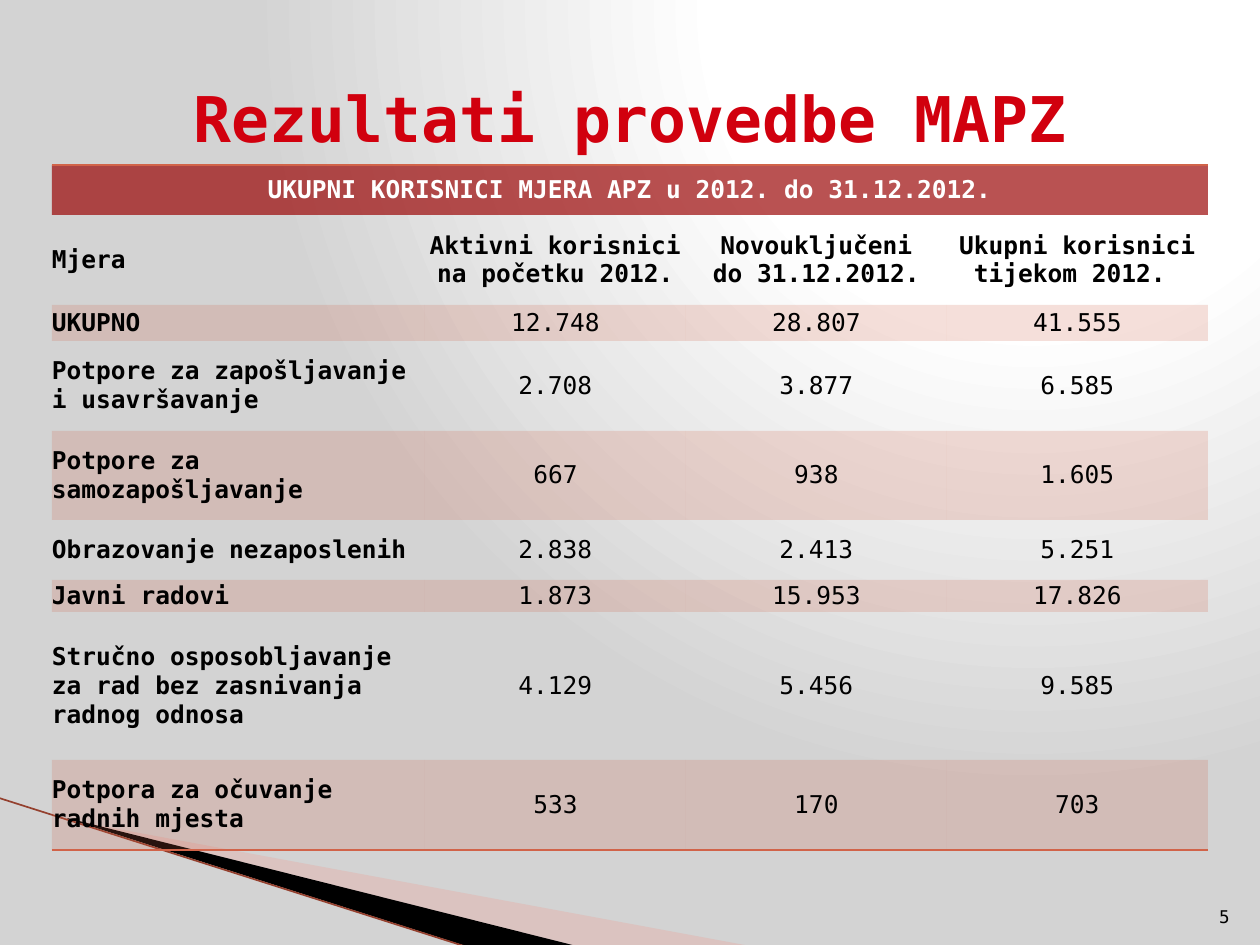
"""Build the slide with the results of the employment measures."""
from lxml.etree import SubElement
from pptx import Presentation
from pptx.dml.color import RGBColor
from pptx.enum.shapes import MSO_CONNECTOR
from pptx.enum.text import MSO_ANCHOR as Anchor, PP_ALIGN as Align
from pptx.oxml import parse_xml
from pptx.oxml.ns import qn
from pptx.util import Emu, Pt

FONT = "DejaVu Sans Mono"
COLORS = {
    "title": "D1000E", "text": "000000", "header_text": "FFFFFF", "header": "990000",
    "accent": "D16349", "wedge": "E7ACA4", "edge": "94402E",
    "light": "FFFFFF", "shade": "D3D3D3",
}
NAMESPACE = "http://schemas.openxmlformats.org/drawingml/2006/main"
NO_TABLE_STYLE = "{2D5ABB26-0587-4C30-8999-92F81FD0307C}"
COLUMN_WIDTHS = [373, 261, 261, 261]
ROW_HEIGHTS = [50, 90, 36, 90, 89, 60, 32, 148, 90]
ROWS = [
    ["UKUPNI KORISNICI MJERA APZ u 2012. do 31.12.2012.", "", "", ""],
    ["Mjera", "Aktivni korisnici \nna početku 2012.",
     "Novouključeni\ndo 31.12.2012.", "Ukupni korisnici\ntijekom 2012. "],
    ["UKUPNO", "12.748", "28.807", "41.555"],
    ["Potpore za zapošljavanje i usavršavanje", "2.708", "3.877", "6.585"],
    ["Potpore za samozapošljavanje", "667", "938", "1.605"],
    ["Obrazovanje nezaposlenih", "2.838", "2.413", "5.251"],
    ["Javni radovi", "1.873", "15.953", "17.826"],
    ["Stručno osposobljavanje za rad bez zasnivanja radnog odnosa",
     "4.129", "5.456", "9.585"],
    ["Potpora za očuvanje radnih mjesta", "533", "170", "703"],
]
SCALE = 914400 / 126


def px(length):
    return Emu(round(length * SCALE))


def rgb(name):
    return RGBColor.from_string(COLORS[name])


def set_fill(fill, color, opacity=100):
    fill.solid()
    fill.fore_color.rgb = rgb(color)
    if opacity < 100:
        element = fill._xPr.find(".//" + qn("a:srgbClr"))
        SubElement(element, qn("a:alpha"), val=str(opacity * 1000))


def write_text(frame, text, align, color="text", **font_values):
    frame.text = text
    for paragraph in frame.paragraphs:
        paragraph.alignment = align
        for run in paragraph.runs:
            for name, value in {"name": FONT, **font_values}.items():
                setattr(run.font, name, value)
            run.font.color.rgb = rgb(color)


def set_background(slide):
    slide.background.fill.solid()
    properties = slide.element.find(".//" + qn("p:bgPr"))
    stops = "".join(
        f'<a:gs pos="{position * 1000}"><a:srgbClr val="{COLORS[name]}"/></a:gs>'
        for position, name in [(0, "light"), (40, "light"), (100, "shade")])
    gradient = parse_xml(
        f'<a:gradFill xmlns:a="{NAMESPACE}" rotWithShape="1"><a:gsLst>{stops}</a:gsLst>'
        '<a:path path="circle"><a:fillToRect l="65000" t="0" r="0" b="98000"/></a:path>'
        '</a:gradFill>')
    properties.replace(properties[0], gradient)


def add_wedge(slide, points, color, opacity=100):
    builder = slide.shapes.build_freeform(*points[0], scale=SCALE)
    builder.add_line_segments(points[1:], close=True)
    shape = builder.convert_to_shape()
    shape.shadow.inherit = False
    shape.line.fill.background()
    set_fill(shape.fill, color, opacity)


def add_line(slide, start, end, color, width):
    ends = [px(value) for value in (*start, *end)]
    connector = slide.shapes.add_connector(MSO_CONNECTOR.STRAIGHT, *ends)
    connector.line.color.rgb = rgb(color)
    connector.line.width = Pt(width)
    SubElement(connector.element.spPr, qn("a:effectLst"))


def add_text(slide, box, text, align, anchor, **text_values):
    frame = slide.shapes.add_textbox(*map(px, box)).text_frame
    frame.word_wrap = True
    frame.vertical_anchor = anchor
    write_text(frame, text, align, **text_values)


def add_border(cell, side):
    properties = cell._tc.get_or_add_tcPr()
    properties.insert(0, parse_xml(
        f'<a:{side} xmlns:a="{NAMESPACE}" w="12700"><a:solidFill>'
        f'<a:srgbClr val="{COLORS["accent"]}"/></a:solidFill></a:{side}>'))


def format_cell(cell, text, row, column):
    cell_values = {"margin_left": 0, "margin_right": 0, "margin_top": 0,
                   "margin_bottom": 0, "vertical_anchor": Anchor.MIDDLE}
    for name, value in cell_values.items():
        setattr(cell, name, value)
    write_text(cell.text_frame, text,
               Align.LEFT if row and column == 0 else Align.CENTER,
               "text" if row else "header_text",
               size=Pt(14), bold=row < 2 or column == 0)
    if row == 0:
        set_fill(cell.fill, "header", 68)
        add_border(cell, "lnT")
    elif row % 2 == 0:
        set_fill(cell.fill, "accent", 20)
    else:
        cell.fill.background()
    if row == len(ROWS) - 1:
        add_border(cell, "lnB")


def add_results_table(slide, left, top):
    size = (sum(COLUMN_WIDTHS), sum(ROW_HEIGHTS))
    table = slide.shapes.add_table(
        len(ROWS), len(COLUMN_WIDTHS), *map(px, (left, top, *size))).table
    table.first_row = table.horz_banding = False
    table._tbl.find(".//" + qn("a:tableStyleId")).text = NO_TABLE_STYLE
    for column, width in zip(table.columns, COLUMN_WIDTHS):
        column.width = px(width)
    for row, height in zip(table.rows, ROW_HEIGHTS):
        row.height = px(height)
    for row, texts in enumerate(ROWS):
        for column, text in enumerate(texts):
            format_cell(table.cell(row, column), text, row, column)
    table.cell(0, 0).merge(table.cell(0, len(COLUMN_WIDTHS) - 1))


def main():
    presentation = Presentation()
    presentation.slide_width, presentation.slide_height = px(1260), px(945)
    slide = presentation.slides.add_slide(presentation.slide_layouts[6])
    set_background(slide)
    add_wedge(slide, [(69, 820), (750, 946), (575, 946), (69, 819)], "wedge", 40)
    add_wedge(slide, [(67, 818), (576, 946), (469, 947), (68, 819)], "text")
    add_line(slide, (-1, 798), (467, 947), "edge", 0.95)
    add_text(slide, (1192, 883, 50, 50), "5", Align.RIGHT, Anchor.BOTTOM, size=Pt(10))
    add_text(slide, (63, 38, 1134, 158), "Rezultati provedbe MAPZ", Align.CENTER,
             Anchor.MIDDLE, color="title", size=Pt(36), bold=True)
    add_results_table(slide, 52, 165)
    presentation.save("out.pptx")


if __name__ == "__main__":
    main()
